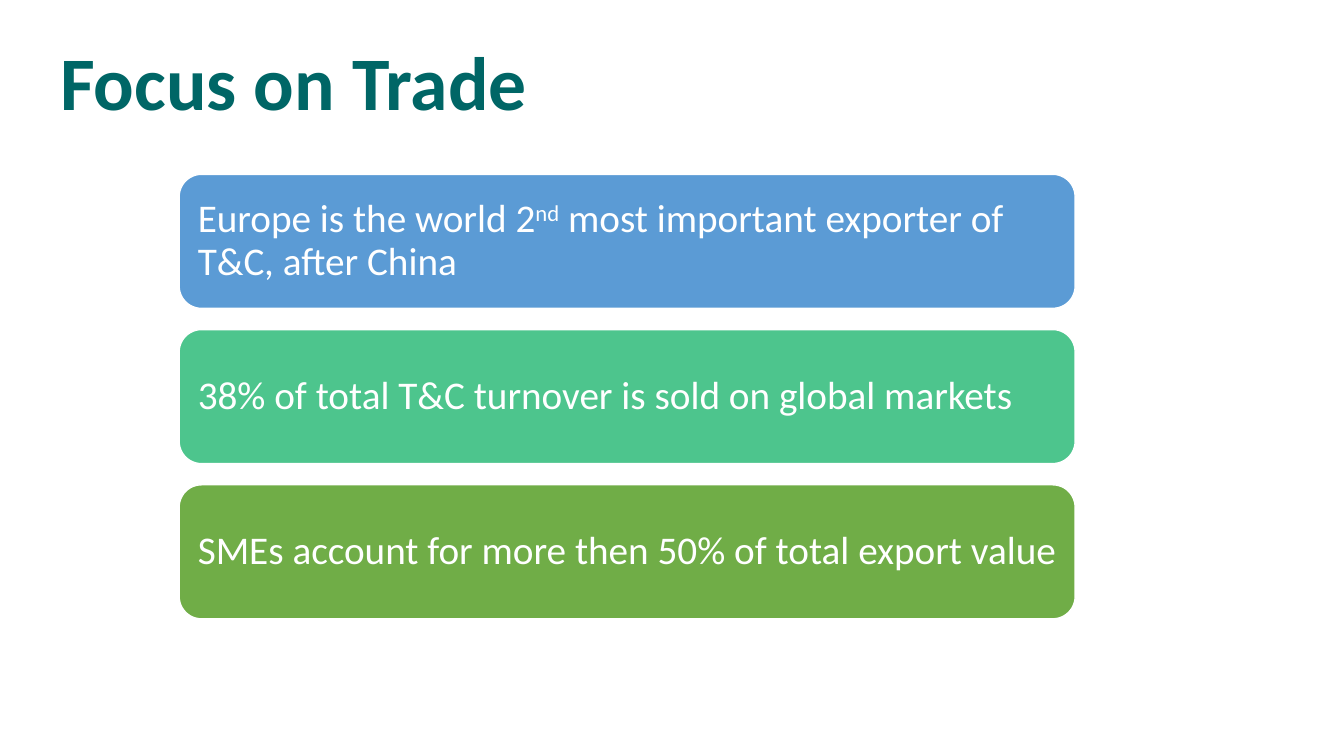
from dataclasses import dataclass

from pptx import Presentation, util as u
from pptx.dml.color import RGBColor
from pptx.enum import shapes, text

COLS, ROWS = 15, 75


@dataclass(frozen=True)
class Theme:
    font: str = "Calibri"
    title_size: float = 54
    body_size: float = 28
    title: str = "006666"
    white: str = "FFFFFF"
    blue: str = "5B9BD5"
    mint: str = "4DC58D"
    green: str = "70AD47"


@dataclass(frozen=True)
class Run:
    text: str
    raised: bool = False


@dataclass(frozen=True)
class Card:
    fill: str
    runs: tuple[Run, ...]


THEME = Theme()
CARDS = (
    Card(THEME.blue, (Run("Europe is the world 2"), Run("nd", raised=True),
                      Run(" most important exporter of T&C, after China"))),
    Card(THEME.mint, (Run("38% of total T&C turnover is sold on global markets"),)),
    Card(THEME.green, (Run("SMEs account for more then 50% of total export value"),)),
)
# Card stack, in grid columns and rows
CARD_LEFT, CARD_WIDTH = 2, 10
CARD_TOP, CARD_HEIGHT, CARD_STEP = 17.3, 13.3, 15.4


def set_all(target, values: dict) -> None:
    for name, value in values.items():
        setattr(target, name, value)


def place(prs, col: float, row: float, cols: float, rows: float) -> tuple[int, ...]:
    """Turn grid units into left, top, width and height."""
    cw, rh = prs.slide_width / COLS, prs.slide_height / ROWS
    return tuple(round(n) for n in (col * cw, row * rh, cols * cw, rows * rh))


def write(sp, runs: tuple[Run, ...], size: float, color: str, bold: bool, inset: float) -> None:
    tf = sp.text_frame
    margins = {f"margin_{side}": u.Inches(inset) for side in ("left", "right", "top", "bottom")}
    set_all(tf, {"word_wrap": True, "vertical_anchor": text.MSO_ANCHOR.MIDDLE, **margins})
    p = tf.paragraphs[0]
    set_all(p, {"alignment": text.PP_ALIGN.LEFT, "line_spacing": 0.9})
    for run in runs:
        r = p.add_run()
        r.text = run.text
        set_all(r.font, {"name": THEME.font, "size": u.Pt(size), "bold": bold})
        r.font.color.rgb = RGBColor.from_string(color)
        if run.raised:
            r.font._element.set("baseline", "30000")


def add_title(prs, s, title: str) -> None:
    sp = s.shapes.add_textbox(*place(prs, 0.56, 1.3, 8.67, 14.5))
    write(sp, (Run(title),), THEME.title_size, THEME.title, True, 0.1)


def add_card(prs, s, card: Card, index: int) -> None:
    box = place(prs, CARD_LEFT, CARD_TOP + index * CARD_STEP, CARD_WIDTH, CARD_HEIGHT)
    sp = s.shapes.add_shape(shapes.MSO_SHAPE.ROUNDED_RECTANGLE, *box)
    sp.shadow.inherit = False
    sp.fill.solid()
    sp.fill.fore_color.rgb = RGBColor.from_string(card.fill)
    sp.line.color.rgb = RGBColor.from_string(THEME.white)
    sp.line.width = u.Pt(1)
    write(sp, card.runs, THEME.body_size, THEME.white, False, 0.12)


def main() -> None:
    prs = Presentation()
    set_all(prs, {"slide_width": u.Inches(13.33), "slide_height": u.Inches(7.5)})
    s = prs.slides.add_slide(prs.slide_layouts[6])
    add_title(prs, s, "Focus on Trade")
    for index, card in enumerate(CARDS):
        add_card(prs, s, card, index)
    prs.save("out.pptx")


if __name__ == "__main__":
    main()
